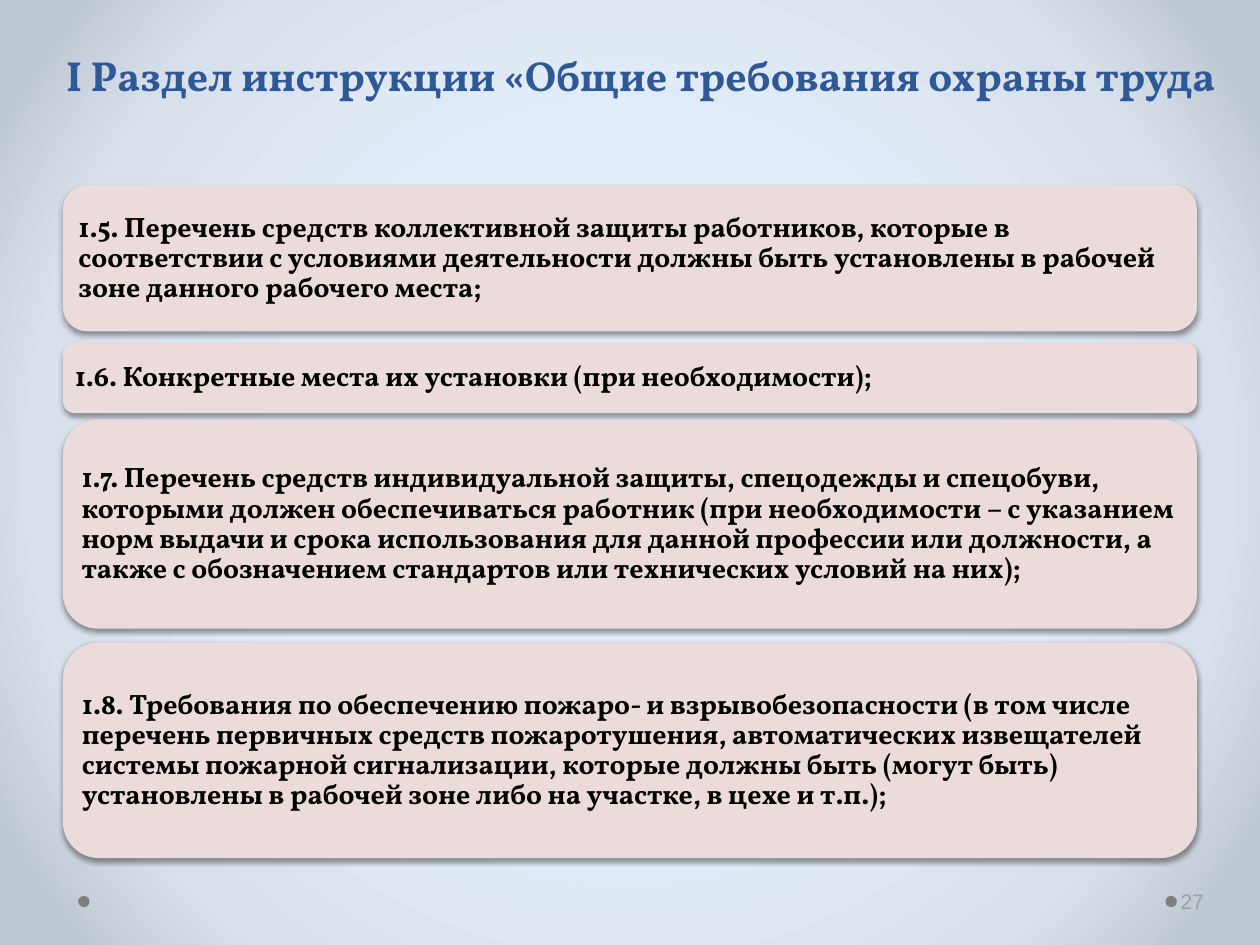
from dataclasses import dataclass

import lxml.etree
import pptx
import pptx.dml.color
import pptx.enum.shapes
import pptx.enum.text
import pptx.oxml
import pptx.oxml.ns
import pptx.util

Pt = pptx.util.Pt
ANCHOR = pptx.enum.text.MSO_ANCHOR
ALIGN = pptx.enum.text.PP_ALIGN
SHAPE = pptx.enum.shapes.MSO_SHAPE
NS = pptx.oxml.ns.nsdecls("a")

COLORS = {
    "title": "2F5897",
    "card": "ECDBDB",
    "text": "000000",
    "dot": "808080",
    "number": "A0A0A0",
    "shadow": "000000",
}
BACKGROUND_STOPS = {43: "E3EDF9", 76: "D8E0EB", 92: "BFC9D4"}
CARD_LEFT, CARD_WIDTH = 36, 648


@dataclass
class TextStyle:
    size: float
    font: str
    color: str
    bold: bool = False


@dataclass
class Card:
    top: float
    height: float
    text: str


TITLE = TextStyle(24, "Vollkorn", "title", True)
BODY = TextStyle(16, "Vollkorn", "text", True)
NUMBER = TextStyle(12, "Arial", "number")

CARDS = [
    Card(105.84, 83.5, "1.5. Перечень средств коллективной защиты работников, которые в "
         "соответствии с условиями деятельности должны быть установлены в рабочей "
         "зоне данного рабочего места;"),
    Card(195.84, 40.3, "1.6. Конкретные места их установки (при необходимости);"),
    Card(239.76, 119.5, "1.7. Перечень средств индивидуальной защиты, спецодежды и спецобуви, "
         "которыми должен обеспечиваться работник (при необходимости – с указанием "
         "норм выдачи и срока использования для данной профессии или должности, а "
         "также с обозначением стандартов или технических условий на них);"),
    Card(367.2, 123.1, "1.8. Требования по обеспечению пожаро- и взрывобезопасности (в том числе "
         "перечень первичных средств пожаротушения, автоматических извещателей "
         "системы пожарной сигнализации, которые должны быть (могут быть) "
         "установлены в рабочей зоне либо на участке, в цехе и т.п.);"),
]


def rgb(name: str) -> pptx.dml.color.RGBColor:
    return pptx.dml.color.RGBColor.from_string(COLORS[name])


def set_background(s) -> None:
    fill = s.background.fill
    fill.gradient()
    old = s.background.fill._xPr.find(pptx.oxml.ns.qn("a:gradFill"))
    stops = "".join(
        f'<a:gs pos="{pos * 1000}"><a:srgbClr val="{color}"/></a:gs>'
        for pos, color in BACKGROUND_STOPS.items()
    )
    new = pptx.oxml.parse_xml(
        f'<a:gradFill {NS} rotWithShape="1"><a:gsLst>{stops}</a:gsLst>'
        '<a:path path="circle"><a:fillToRect l="50000" t="50000" r="50000" b="50000"/>'
        "</a:path></a:gradFill>"
    )
    old.getparent().replace(old, new)


def add_solid(s, kind, left: float, top: float, width: float, height: float, color: str):
    sp = s.shapes.add_shape(kind, Pt(left), Pt(top), Pt(width), Pt(height))
    sp.shadow.inherit = False
    sp.fill.solid()
    sp.fill.fore_color.rgb = rgb(color)
    sp.line.fill.background()
    return sp


def add_shadow(sp) -> None:
    effects = sp._element.spPr.find(pptx.oxml.ns.qn("a:effectLst"))
    effects.append(pptx.oxml.parse_xml(
        f'<a:outerShdw {NS} blurRad="{Pt(3.1)}" dist="{Pt(1.6)}" dir="5400000" rotWithShape="0">'
        f'<a:srgbClr val="{COLORS["shadow"]}"><a:alpha val="38000"/></a:srgbClr></a:outerShdw>'
    ))


def write(sp, text: str, style: TextStyle, anchor, align=ALIGN.LEFT, spacing: float = 1.0) -> None:
    tf = sp.text_frame
    tf.word_wrap = True
    tf.vertical_anchor = anchor
    p = tf.paragraphs[0]
    p.alignment = align
    p.line_spacing = spacing
    r = p.add_run()
    r.text = text
    r.font.size = Pt(style.size)
    r.font.name = style.font
    r.font.bold = style.bold
    r.font.color.rgb = rgb(style.color)


def add_card(s, card: Card) -> None:
    sp = add_solid(s, SHAPE.ROUNDED_RECTANGLE, CARD_LEFT, card.top, CARD_WIDTH, card.height, "card")
    add_shadow(sp)
    tf = sp.text_frame
    tf.margin_left = tf.margin_right = tf.margin_top = tf.margin_bottom = Pt(4.8)
    write(sp, card.text, BODY, ANCHOR.MIDDLE, spacing=0.9)


def main() -> None:
    prs = pptx.Presentation()
    prs.slide_width, prs.slide_height = Pt(720), Pt(540)
    s = prs.slides.add_slide(prs.slide_layouts[6])
    set_background(s)

    for left in (666, 44.64):
        add_solid(s, SHAPE.OVAL, left, 511.9, 6.5, 6.5, "dot")

    title = s.shapes.add_textbox(Pt(20.16), Pt(9.36), Pt(691.9), Pt(51.1))
    write(title, "I Раздел инструкции «Общие требования охраны труда", TITLE,
          ANCHOR.BOTTOM, ALIGN.CENTER)

    for card in CARDS:
        add_card(s, card)

    number = s.shapes.add_textbox(Pt(672.5), Pt(500.4), Pt(43.9), Pt(28.8))
    number.text_frame.margin_left = Pt(2.2)
    write(number, "27", NUMBER, ANCHOR.MIDDLE)

    prs.save("out.pptx")


if __name__ == "__main__":
    main()
